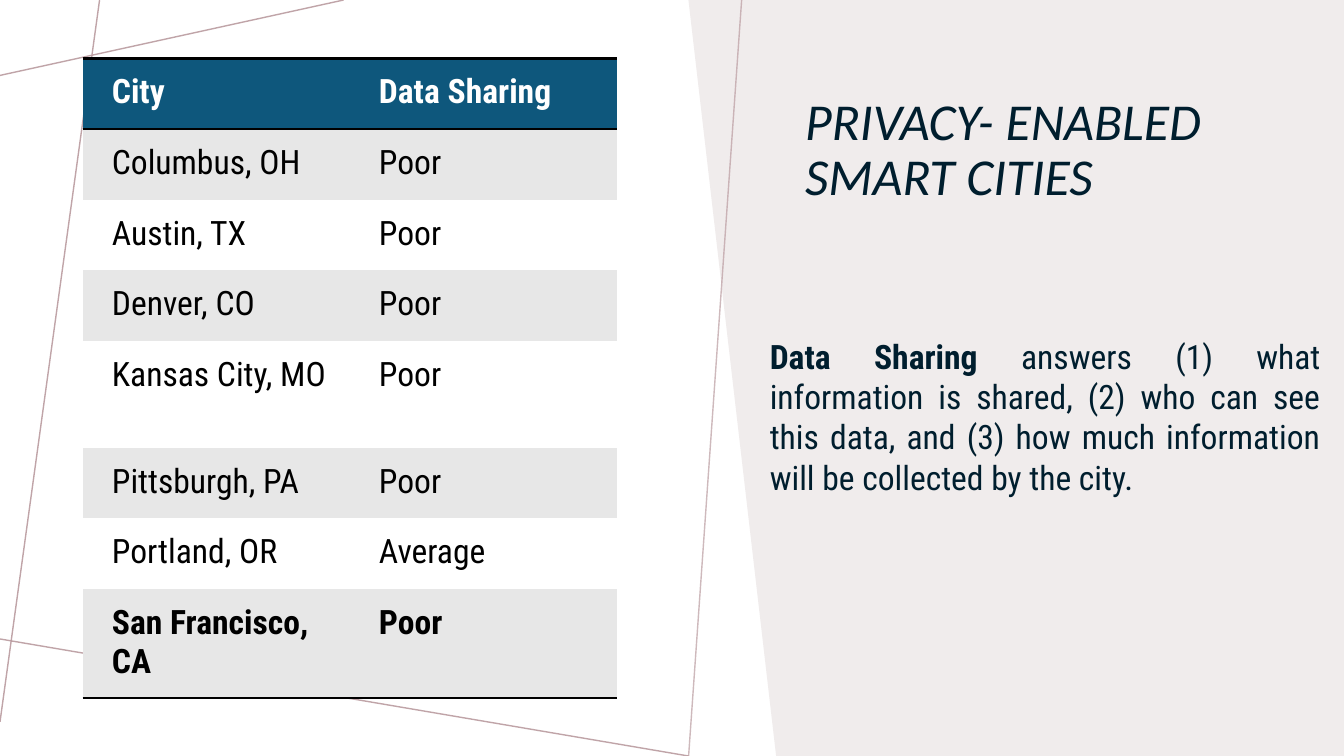
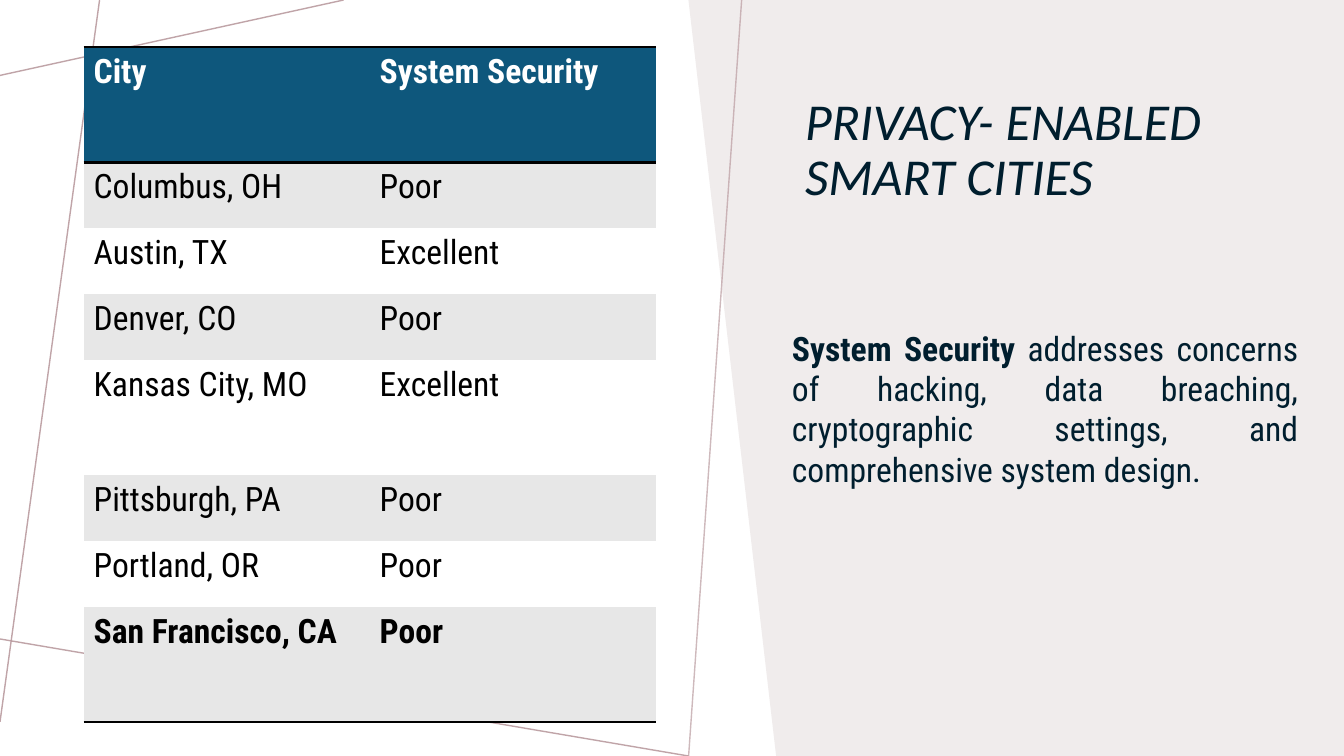
from lxml import etree
from pptx import Presentation
from pptx.dml.color import RGBColor
from pptx.enum.shapes import MSO_CONNECTOR
from pptx.enum.text import MSO_ANCHOR, PP_ALIGN
from pptx.oxml import parse_xml
from pptx.oxml.ns import nsdecls, qn
from pptx.util import Cm, Pt

STRAIGHT = MSO_CONNECTOR.STRAIGHT
MIDDLE, TOP = MSO_ANCHOR.MIDDLE, MSO_ANCHOR.TOP
JUSTIFY = PP_ALIGN.JUSTIFY
NO_GRID = "{2D5ABB26-0587-4C30-8999-92F81FD0307C}"

# Theme: colours, type and line widths
THEME = {
    "line": RGBColor.from_string("BA9CA0"),
    "panel": RGBColor.from_string("F0ECEC"),
    "ink": RGBColor.from_string("001E2E"),
    "head": RGBColor.from_string("0E577C"),
    "bands": [RGBColor.from_string("E7E7E7"), RGBColor.from_string("FFFFFF")],
    "white": RGBColor.from_string("FFFFFF"),
    "black": RGBColor.from_string("000000"),
    "title": {"name": "Calibri", "size": Pt(37), "italic": True},
    "text": {"name": "Roboto Condensed", "size": Pt(24), "bold": False},
    "strong": {"name": "Roboto Condensed", "size": Pt(24), "bold": True},
    "thin": Pt(1),
    "rule": Pt(2),
}

# Shared parts: start x, start y, end x, end y, opacity in percent
WIDTH, HEIGHT = 33.87, 19.05
LINES = [
    (8.66, 0, 0, 1.9, 91),
    (2.51, 0, 0, 18.19, 91),
    (17.35, HEIGHT, -0.13, 16.08, 91),
]
DIVIDER = (18.69, 0, 17.35, 19.1, 70)
PANEL = [(WIDTH, 0), (17.35, 0), (19.56, HEIGHT), (WIDTH, HEIGHT)]
TITLE = "PRIVACY- ENABLED SMART CITIES"
CITIES = ["Columbus, OH", "Austin, TX", "Denver, CO", "Kansas City, MO",
          "Pittsburgh, PA", "Portland, OR", "San Francisco, CA"]

# What differs from slide to slide
SLIDES = [
    {
        "topic": "Data Sharing",
        "text": "answers (1) what information is shared, (2) who can see this "
                "data, and (3) how much information will be collected by the city.",
        "box": (19.15, 8.33, 14.38, 10.7),
        "marks": ["Poor"] * 5 + ["Average", "Poor"],
        "place": (2.08, 1.47), "col": 6.73,
        "low": 1.78, "high": 2.69, "tall": {4, 7},
        "inset": {"margin_left": 0.74, "margin_top": 0.36,
                  "margin_right": 0.36, "margin_bottom": 0.36},
    },
    {
        "topic": "System Security",
        "text": "addresses concerns of hacking, data breaching, cryptographic "
                "settings, and comprehensive system design.",
        "box": (19.71, 8.13, 13.26, 10.7),
        "marks": ["Poor", "Excellent"] * 2 + ["Poor"] * 3,
        "place": (2.11, 1.19), "col": 7.21,
        "low": 1.66, "high": 2.9, "tall": {0, 4, 7},
        "inset": {"margin_left": 0.25, "margin_top": 0.13,
                  "margin_right": 0.25, "margin_bottom": 0.13},
    },
]


def write(para, text, style, color):
    font_run = para.add_run()
    font_run.text = text
    for key, value in style.items():
        setattr(font_run.font, key, value)
    font_run.font.color.rgb = color


def draw(slide, x1, y1, x2, y2, alpha):
    link = slide.shapes.add_connector(STRAIGHT, Cm(x1), Cm(y1), Cm(x2), Cm(y2))
    link.line.width = THEME["thin"]
    link.line.color.rgb = THEME["line"]
    tint = next(link._element.iter(qn("a:srgbClr")))
    etree.SubElement(tint, qn("a:alpha")).set("val", str(alpha * 1000))
    etree.SubElement(link._element.spPr, qn("a:effectLst"))


deck = Presentation()
deck.slide_width, deck.slide_height = Cm(WIDTH), Cm(HEIGHT)

for page in SLIDES:
    slide = deck.slides.add_slide(deck.slide_layouts[6])

    # Backdrop: thin lines, slanted panel, divider
    for line in LINES:
        draw(slide, *line)
    points = [(Cm(x), Cm(y)) for x, y in PANEL]
    form = slide.shapes.build_freeform(*points[0])
    form.add_line_segments(points[1:], close=True)
    panel = form.convert_to_shape()
    panel.shadow.inherit = False
    panel.fill.solid()
    panel.fill.fore_color.rgb = THEME["panel"]
    panel.line.fill.background()
    draw(slide, *DIVIDER)

    # Title and body text
    blocks = [
        ((20.04, 1.5, 12.34, 4.62), MIDDLE, {"line_spacing": 0.9},
         [(TITLE, "title")]),
        (page["box"], TOP, {"alignment": JUSTIFY, "space_before": Pt(10)},
         [(page["topic"] + " ", "strong"), (page["text"], "text")]),
    ]
    for box, anchor, form, runs in blocks:
        frame = slide.shapes.add_textbox(*map(Cm, box)).text_frame
        frame.word_wrap = True
        frame.vertical_anchor = anchor
        para = frame.paragraphs[0]
        for key, value in form.items():
            setattr(para, key, value)
        for text, style in runs:
            write(para, text, THEME[style], THEME["ink"])

    # Table of cities
    rows = [("City", page["topic"]), *zip(CITIES, page["marks"])]
    last = len(rows) - 1
    sizes = [page["high" if r in page["tall"] else "low"] for r in range(len(rows))]
    table = slide.shapes.add_table(
        len(rows), 2, *map(Cm, page["place"]),
        Cm(2 * page["col"]), Cm(sum(sizes))).table
    table.first_row = table.horz_banding = False
    next(table._tbl.iter(qn("a:tableStyleId"))).text = NO_GRID
    for col in table.columns:
        col.width = Cm(page["col"])

    for r, row in enumerate(rows):
        table.rows[r].height = Cm(sizes[r])
        fill = THEME["bands"][(r - 1) % 2] if r else THEME["head"]
        color = THEME["black"] if r else THEME["white"]
        style = THEME["strong" if r in (0, last) else "text"]
        edges = {0: ["lnT", "lnB"], last: ["lnB"]}.get(r, [])
        for c, text in enumerate(row):
            cell = table.cell(r, c)
            for key, value in page["inset"].items():
                setattr(cell, key, Cm(value))
            cell.fill.solid()
            cell.fill.fore_color.rgb = fill
            write(cell.text_frame.paragraphs[0], text, style, color)
            for spot, edge in enumerate(edges):
                cell._tc.get_or_add_tcPr().insert(spot, parse_xml(
                    f'<a:{edge} {nsdecls("a")} w="{THEME["rule"]}"><a:solidFill>'
                    f'<a:srgbClr val="{THEME["black"]}"/></a:solidFill></a:{edge}>'))

deck.save("out.pptx")
